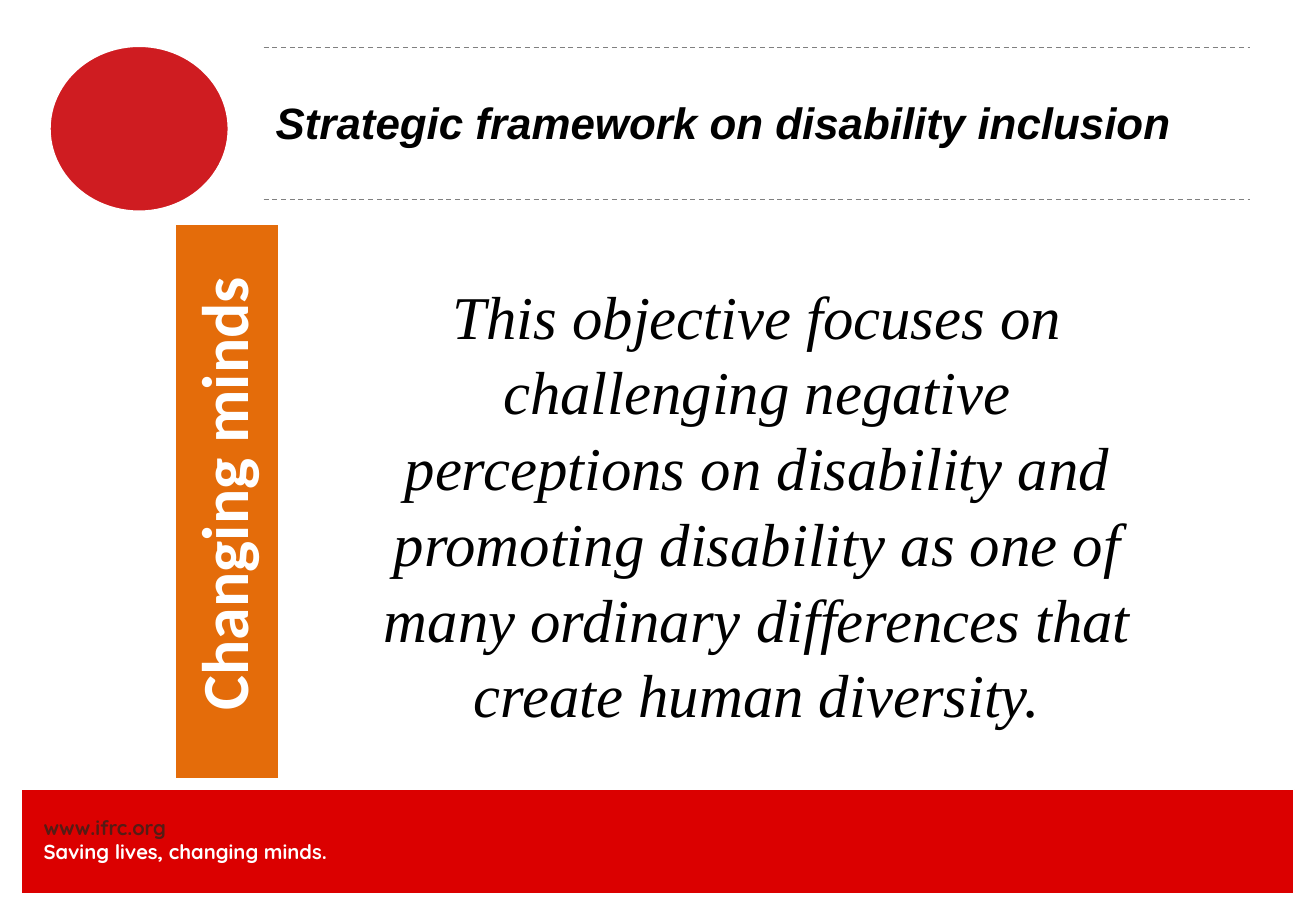
import pptx
import pptx.util
import pptx.dml.color
import pptx.enum.dml
import pptx.enum.shapes
import pptx.enum.text
import pptx.oxml.ns
import lxml.etree

Inches = pptx.util.Inches
Pt = pptx.util.Pt
RGBColor = pptx.dml.color.RGBColor
MSO_SHAPE = pptx.enum.shapes.MSO_SHAPE
MIDDLE = pptx.enum.text.MSO_ANCHOR.MIDDLE
CENTER = pptx.enum.text.PP_ALIGN.CENTER

WHITE = RGBColor(0xFF, 0xFF, 0xFF)
BLACK = RGBColor(0x00, 0x00, 0x00)
FOOTER_RED = RGBColor(0xDB, 0x00, 0x00)
CIRCLE_RED = RGBColor(0xCF, 0x1C, 0x21)
ORANGE = RGBColor(0xE4, 0x6C, 0x0A)
BROWN = RGBColor(0x55, 0x1C, 0x15)
GREY = RGBColor(0x80, 0x80, 0x80)


def add_block(kind, left, top, width, height, fill, line_width):
    sp = s.shapes.add_shape(kind, Inches(left), Inches(top), Inches(width), Inches(height))
    sp.shadow.inherit = False
    sp.fill.solid()
    sp.fill.fore_color.rgb = fill
    sp.line.color.rgb = WHITE
    sp.line.width = Pt(line_width)
    return sp


def add_run(p, text, font, size, color, bold=False, italic=False):
    r = p.add_run()
    r.text = text
    r.font.name = font
    r.font.size = Pt(size)
    r.font.color.rgb = color
    r.font.bold = bold
    r.font.italic = italic


prs = pptx.Presentation()
prs.slide_width = Inches(10.83)
prs.slide_height = Inches(7.5)
s = prs.slides.add_slide(prs.slide_layouts[6])

add_block(MSO_SHAPE.RECTANGLE, 0.18, 6.5, 10.47, 0.86, FOOTER_RED, 0.75)
tf = s.shapes.add_textbox(Inches(0.36), Inches(6.71), Inches(3.7), Inches(0.4)).text_frame
tf.word_wrap = True
tf.margin_left = tf.margin_right = tf.margin_top = tf.margin_bottom = 0
add_run(tf.paragraphs[0], "www.ifrc.org", "Quicksand", 12, BROWN, bold=True)
add_run(tf.add_paragraph(), "Saving lives, changing minds.", "Quicksand", 12, WHITE, bold=True)

add_block(MSO_SHAPE.OVAL, 0.4, 0.37, 1.49, 1.38, CIRCLE_RED, 2.5)

for y in (0.39, 1.64):
    rule = s.shapes.add_connector(pptx.enum.shapes.MSO_CONNECTOR.STRAIGHT,
                                  Inches(2.17), Inches(y), Inches(10.29), Inches(y))
    rule.line.color.rgb = GREY
    rule.line.width = Pt(0.75)
    rule.line.dash_style = pptx.enum.dml.MSO_LINE.DASH
    lxml.etree.SubElement(rule._element.spPr, pptx.oxml.ns.qn("a:effectLst"))

tf = s.shapes.add_textbox(Inches(2.17), Inches(0.38), Inches(8.12), Inches(1.25)).text_frame
tf.word_wrap = True
tf.vertical_anchor = MIDDLE
add_run(tf.paragraphs[0], "Strategic framework on disability inclusion", "Arial", 26, BLACK,
        bold=True, italic=True)

banner = add_block(MSO_SHAPE.RECTANGLE, -0.42, 3.69, 4.58, 0.87, ORANGE, 2)
banner.rotation = 270
tf = banner.text_frame
tf.word_wrap = True
tf.vertical_anchor = MIDDLE
tf.margin_left = tf.margin_right = tf.margin_top = tf.margin_bottom = Inches(0.03)
p = tf.paragraphs[0]
p.alignment = CENTER
p.line_spacing = 0.9
add_run(p, " ", "Calibri", 39, WHITE)
add_run(p, "Changing minds", "Calibri", 39, WHITE, bold=True)

tf = s.shapes.add_textbox(Inches(2.87), Inches(2.22), Inches(6.72), Inches(3.74)).text_frame
tf.word_wrap = True
p = tf.paragraphs[0]
p.alignment = CENTER
p.line_spacing = 1.04
add_run(p, "This objective focuses on challenging negative perceptions on disability and "
        "promoting disability as one of many ordinary differences that create human diversity.",
        "Times New Roman", 36, BLACK, italic=True)

prs.save("out.pptx")
